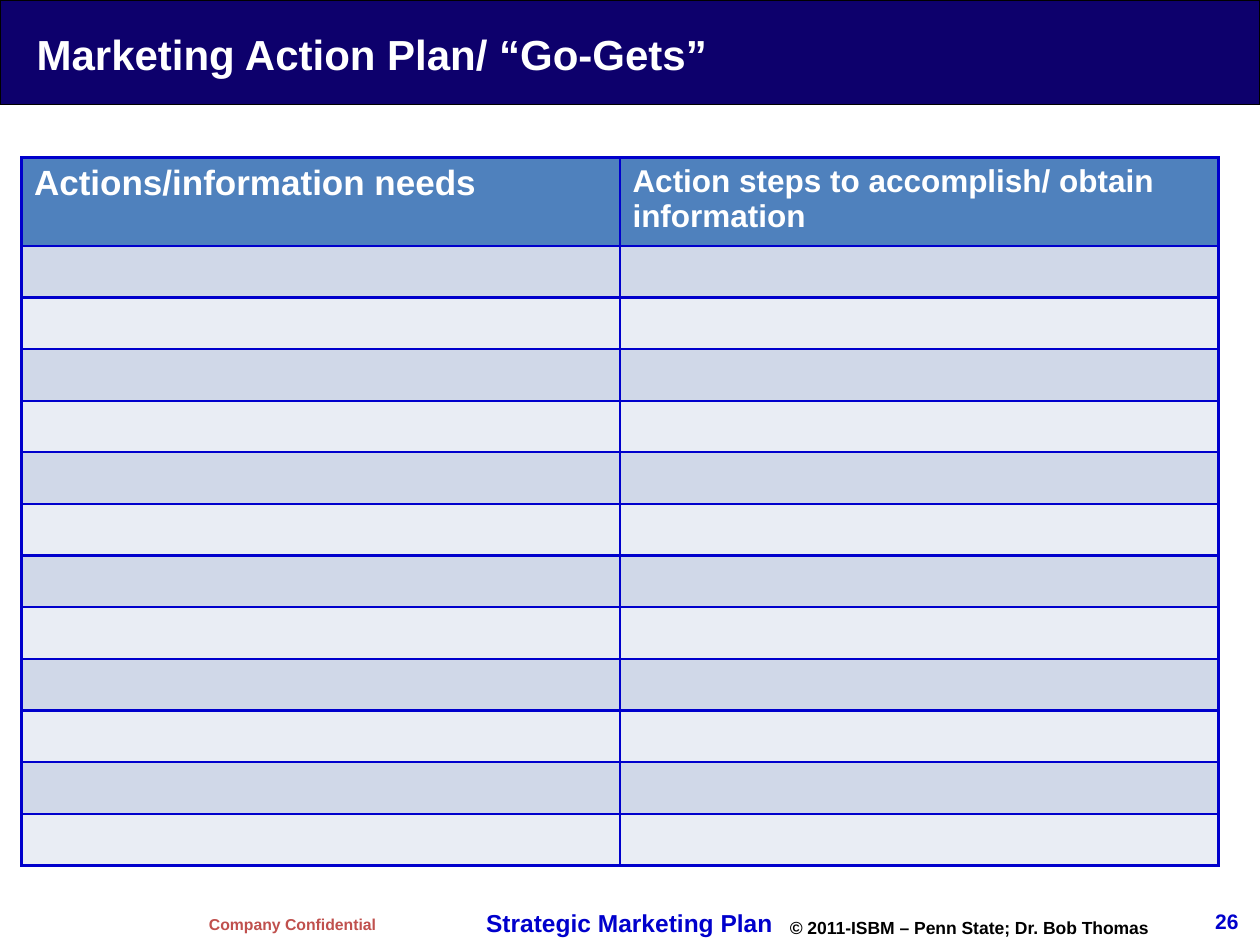
from lxml.etree import SubElement
from pptx import Presentation
from pptx.dml.color import RGBColor
from pptx.enum.shapes import MSO_SHAPE
from pptx.enum.text import MSO_ANCHOR, PP_ALIGN
from pptx.oxml.ns import qn
from pptx.util import Inches, Pt


def paint(part, tone):
    """Give a fill or a font a solid hex colour."""
    if hasattr(part, "solid"):
        part.solid()
        part.fore_color.rgb = RGBColor.from_string(tone)
    else:
        part.color.rgb = RGBColor.from_string(tone)


def write(frame, text, size, tone, align=PP_ALIGN.LEFT):
    para = frame.paragraphs[0]
    para.alignment = align
    run = para.add_run()
    run.text = text
    run.font.name = "Arial"
    run.font.size = Pt(size)
    run.font.bold = True
    paint(run.font, tone)


BLUE = "0000CC"
WHITE = "FFFFFF"

deck = Presentation()
deck.slide_width, deck.slide_height = Inches(10), Inches(7.5)
slide = deck.slides.add_slide(deck.slide_layouts[5])
shapes = slide.shapes

# Title on a dark band
title = shapes.title
band = shapes.add_shape(MSO_SHAPE.RECTANGLE, 0, 0, deck.slide_width, Inches(0.83))
band.shadow.inherit = False
paint(band.fill, "0D006C")
paint(band.line.fill, "000000")
band.line.width = Pt(0.75)
title.element.addprevious(band.element)

title.left, title.top = Inches(0.17), Inches(0.03)
title.width, title.height = Inches(9.67), Inches(0.8)
frame = title.text_frame
frame.margin_left = Inches(0.12)
frame.margin_top = frame.margin_right = frame.margin_bottom = 0
frame.vertical_anchor = MSO_ANCHOR.MIDDLE
write(frame, "Marketing Action Plan/ “Go-Gets”", 24, WHITE)

# Footer line
notes = [
    ("Company Confidential", 1.56, 7.21, 1.53, 0.25, 9, "C0504D"),
    ("Strategic Marketing Plan", 3.76, 7.16, 2.49, 0.34, 14, BLUE),
    ("© 2011-ISBM – Penn State; Dr. Bob Thomas", 6.17, 7.23, 3.42, 0.27, 10, "000000"),
]
for text, left, top, width, height, size, tone in notes:
    box = shapes.add_textbox(Inches(left), Inches(top), Inches(width), Inches(height))
    box.text_frame.word_wrap = size == 10
    write(box.text_frame, text, size, tone)

# Page number
page = shapes.add_textbox(Inches(9), Inches(7.08), Inches(0.83), Inches(0.33))
frame = page.text_frame
frame.word_wrap = True
frame.margin_left = frame.margin_top = frame.margin_right = frame.margin_bottom = 0
frame.vertical_anchor = MSO_ANCHOR.BOTTOM
write(frame, "26", 12, BLUE, PP_ALIGN.RIGHT)

# Action table: one head row and twelve blank rows
heads = [
    ("Actions/information needs", 20),
    ("Action steps to accomplish/ obtain information", 18),
]
blanks = 12
head, step = 0.66, 0.41
grid = shapes.add_table(
    blanks + 1, len(heads), Inches(0.17), Inches(1.25),
    Inches(9.5), Inches(head + blanks * step),
).table
for r, row in enumerate(grid.rows):
    row.height = Inches(step if r else head)
    for c, cell in enumerate(row.cells):
        # Borders come before the fill in the cell's XML
        props = cell._tc.get_or_add_tcPr()
        for side in ("a:lnL", "a:lnR", "a:lnT", "a:lnB"):
            line = SubElement(props, qn(side), w=str(Pt(1.5)))
            fill = SubElement(line, qn("a:solidFill"))
            SubElement(fill, qn("a:srgbClr"), val=BLUE)
        if r:
            paint(cell.fill, "D0D8E8" if r % 2 else "E9EDF4")
        else:
            paint(cell.fill, "4F81BD")
            write(cell.text_frame, *heads[c], WHITE)

deck.save("out.pptx")
